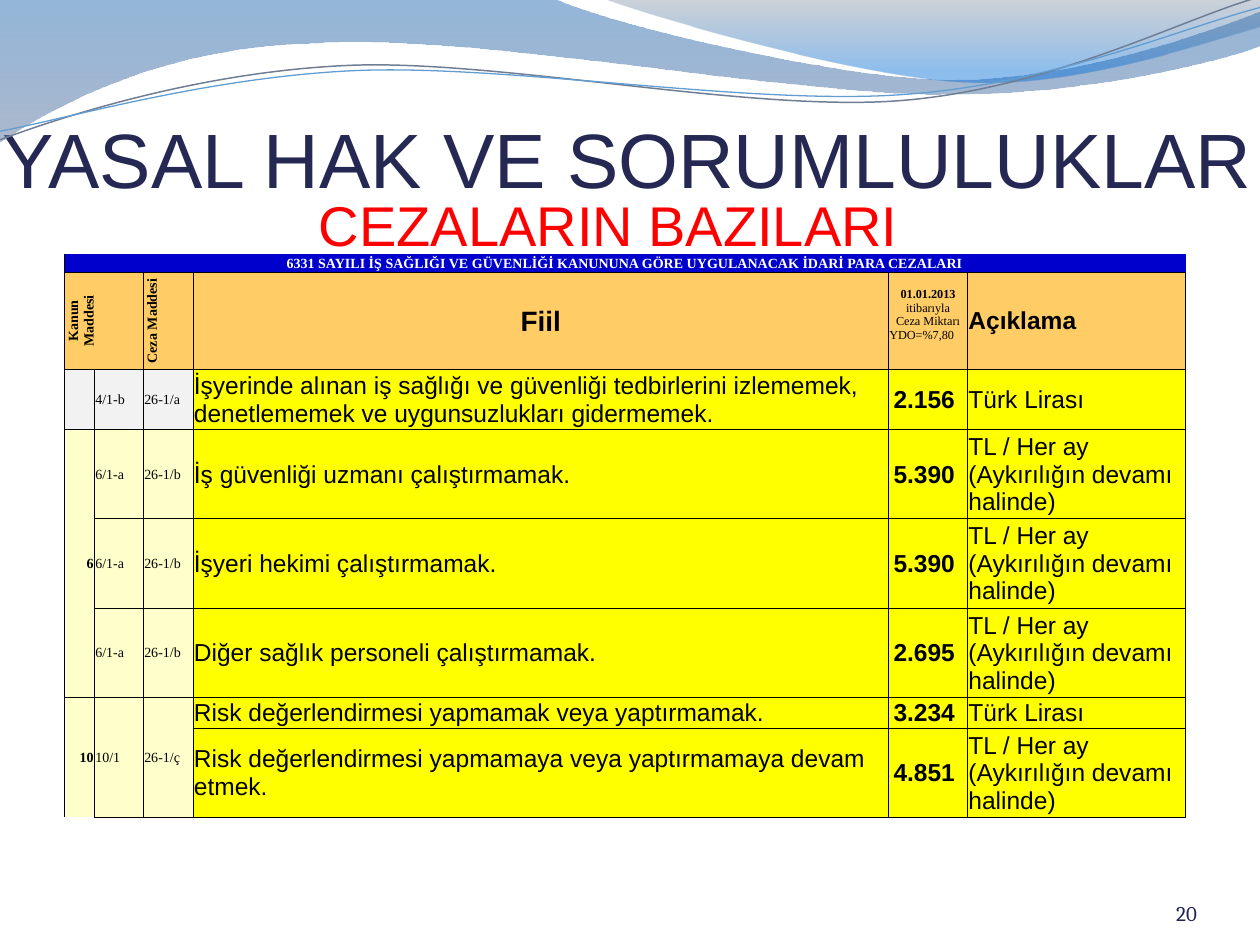
from lxml import etree
from pptx import Presentation
from pptx.dml.color import RGBColor
from pptx.enum.text import MSO_ANCHOR, PP_ALIGN
from pptx.oxml.ns import qn
from pptx.util import Pt

LEFT, CENTER, RIGHT = PP_ALIGN.LEFT, PP_ALIGN.CENTER, PP_ALIGN.RIGHT
TOP, MIDDLE, BOTTOM = MSO_ANCHOR.TOP, MSO_ANCHOR.MIDDLE, MSO_ANCHOR.BOTTOM
SANS, SERIF = "Arial", "Times New Roman"

# Header waves, in points: start, then straight (2 numbers) or cubic (6 numbers) steps
WAVES = [
    dict(start=(0, 0), steps=[
        (316.8, -0.7),
        (342.7, 12.2, 478.1, 45.4, 545.8, 45.4),
        (614.2, 45.4, 689.8, 18.7, 720, 6.5),
        (720.7, 25.9),
        (707.8, 31.7, 626.4, 54.7, 537.1, 54),
        (447.8, 54, 275, 20.2, 185, 24.5),
        (92.9, 25.9, 33.1, 59.8, -0.7, 81.4)],
        stops=[(0, "125EAA", 45), (1, "697FA4", 55)]),
    dict(start=(344.9, -0.7), steps=[
        (366.5, 7.9, 491, 44.6, 553.7, 46.8),
        (616.3, 49.7, 691.9, 23, 720, 15.1),
        (720, 0)],
        stops=[(0, "596982", 30), (0.8, "0670DA", 45)]),
    dict(start=(0, 79.9), steps=[
        (34.6, 67, 113.8, 41, 199.4, 37.4),
        (284.4, 33.8, 427, 64.1, 513.4, 57.6),
        (599.8, 51.1, 675.4, 10.8, 718.6, -1.4)],
        line=("707E95", 0.85)),
    dict(start=(0, 74.9), steps=[
        (33.8, 69.1, 118.1, 43.9, 203.8, 40.3),
        (290.2, 36.7, 429.8, 60.5, 516.2, 54),
        (601.9, 48.2, 677.5, 15.1, 720, 4.3)],
        line=("629DD1", 0.75)),
]

# Table content; None marks a cell covered by a merge
MONTHLY = "TL / Her ay (Aykırılığın devamı halinde)"
BANNER = "6331 SAYILI İŞ SAĞLIĞI VE GÜVENLİĞİ KANUNUNA GÖRE UYGULANACAK İDARİ PARA CEZALARI"
ROWS = [
    [BANNER] + [None] * 5,
    ["Kanun Maddesi", None, "Ceza Maddesi", "Fiil", "01.01.2013 ", "Açıklama"],
    ["", "4/1-b", "26-1/a", "İşyerinde alınan iş sağlığı ve güvenliği tedbirlerini izlememek, "
     "denetlememek ve uygunsuzlukları gidermemek.", "2.156", "Türk Lirası"],
    ["6", "6/1-a", "26-1/b", "İş güvenliği uzmanı çalıştırmamak.", "5.390", MONTHLY],
    [None, "6/1-a", "26-1/b", "İşyeri hekimi çalıştırmamak.", "5.390", MONTHLY],
    [None, "6/1-a", "26-1/b", "Diğer sağlık personeli çalıştırmamak.", "2.695", MONTHLY],
    ["10", "10/1", "26-1/ç", "Risk değerlendirmesi yapmamak veya yaptırmamak.",
     "3.234", "Türk Lirası"],
    [None, None, None, "Risk değerlendirmesi yapmamaya veya yaptırmamaya devam etmek.",
     "4.851", MONTHLY],
]
MERGES = [(0, 0, 0, 5), (1, 0, 1, 1), (3, 0, 5, 0), (6, 0, 7, 0), (6, 1, 7, 1), (6, 2, 7, 2)]
COL_WIDTHS = [17, 28, 28.4, 397.4, 45.2, 124.6]
ROW_HEIGHTS = [10.4, 55.4, 34.2, 51, 51, 51, 17.6, 51]
SIDES = {(0, c): "LB" for c in range(6)} | {(6, 0): "LRT", (7, 0): "LR"}

# Formats for header cells and for body columns
SMALL = dict(size=8, font=SERIF)
LARGE = dict(size=14, font=SANS)
HEADS = [dict(SMALL, bold=True, align=CENTER)] * 3 + [
    dict(size=16, font=SANS, bold=True, align=CENTER),
    dict(size=7, font=SERIF, bold=True, align=CENTER),
    dict(LARGE, bold=True)]
BODY = [dict(SMALL, bold=True, align=RIGHT), SMALL, SMALL, LARGE,
        dict(LARGE, bold=True, align=RIGHT), LARGE]


def rgb(value):
    return RGBColor.from_string(value)


def write(p, text, size, font, color="000000", bold=False, align=LEFT):
    """Add one formatted run to a paragraph."""
    p.alignment = align
    r = p.add_run()
    r.text = text
    r.font.size, r.font.name, r.font.bold = Pt(size), font, bold
    r.font.color.rgb = rgb(color)


def frame(sp, box, anchor, margins):
    """Place a text shape and set up its frame."""
    sp.left, sp.top, sp.width, sp.height = map(Pt, box)
    tf = sp.text_frame
    tf.word_wrap, tf.vertical_anchor = True, anchor
    tf.margin_left, tf.margin_top, tf.margin_right, tf.margin_bottom = map(Pt, margins)
    return tf.paragraphs[0]


def draw_wave(s, start, steps, stops=None, line=None):
    points = [(Pt(x), Pt(y)) for step in steps for x, y in zip(step[::2], step[1::2])]
    builder = s.shapes.build_freeform(Pt(start[0]), Pt(start[1]))
    builder.add_line_segments(points, close=bool(stops))
    sp = builder.convert_to_shape()
    sp.shadow.inherit = False
    # Join each three points of a cubic step into one curve
    nodes = iter(list(sp._element.iter(qn("a:lnTo"))))
    for step in steps:
        group = [next(nodes) for _ in range(len(step) // 2)]
        if len(group) == 3:
            curve = etree.Element(qn("a:cubicBezTo"))
            group[0].addprevious(curve)
            for node in group:
                curve.append(node[0])
                node.getparent().remove(node)
    if line:
        sp.fill.background()
        sp.line.color.rgb, sp.line.width = rgb(line[0]), Pt(line[1])
        return
    sp.line.fill.background()
    sp.fill.gradient()
    sp.fill.gradient_angle = 270
    for stop, (position, color, _) in zip(sp.fill.gradient_stops, stops):
        stop.position, stop.color.rgb = position, rgb(color)
    colors = sp._element.spPr.find(qn("a:gradFill")).iter(qn("a:srgbClr"))
    for node, (_, _, opacity) in zip(colors, stops):
        etree.SubElement(node, qn("a:alpha"), val=str(opacity * 1000))


def set_borders(cell, sides):
    tc_pr = cell._tc.get_or_add_tcPr()
    for i, side in enumerate("LRTB"):
        ln = etree.Element(qn("a:ln" + side), w=str(Pt(0.5)))
        if side in sides:
            fill = etree.SubElement(ln, qn("a:solidFill"))
            etree.SubElement(fill, qn("a:srgbClr"), val="000000")
        else:
            etree.SubElement(ln, qn("a:noFill"))
        tc_pr.insert(i, ln)


def cell_fill(row, col):
    if row < 2:
        return ("0000CC", "FFCC66")[row]
    if col > 2:
        return "FFFF00"
    return "F2F2F2" if row == 2 else "FFFFCC"


def cell_format(row, col):
    if row == 0:
        return dict(HEADS[0], color="FFFFFF")
    return HEADS[col] if row == 1 else BODY[col]


def draw_table(s):
    shape = s.shapes.add_table(len(ROWS), len(COL_WIDTHS), Pt(37), Pt(145.2),
                               Pt(sum(COL_WIDTHS)), Pt(sum(ROW_HEIGHTS)))
    table = shape.table
    table.first_row = table.horz_banding = False
    for column, width in zip(table.columns, COL_WIDTHS):
        column.width = Pt(width)
    for row, height in zip(table.rows, ROW_HEIGHTS):
        row.height = Pt(height)
    for r, texts in enumerate(ROWS):
        for c, text in enumerate(texts):
            cell = table.cell(r, c)
            cell.vertical_anchor = MIDDLE
            cell.margin_left = cell.margin_top = Pt(0.5)
            cell.margin_right = Pt(7.2 if r > 1 and c == 4 else 0.5)
            cell.margin_bottom = 0
            cell.fill.solid()
            cell.fill.fore_color.rgb = rgb(cell_fill(r, c))
            set_borders(cell, SIDES.get((r, c), "LRTB"))
            if text:
                write(cell.text_frame.paragraphs[0], text, **cell_format(r, c))
    for r1, c1, r2, c2 in MERGES:
        table.cell(r1, c1).merge(table.cell(r2, c2))
    # Upright headings and the rest of the amount heading
    for c in (0, 2):
        table.cell(1, c)._tc.get_or_add_tcPr().set("vert", "vert270")
    amount = table.cell(1, 4)
    amount.margin_bottom = Pt(7.5)
    tf = amount.text_frame
    plain = dict(HEADS[4], bold=False)
    write(tf.paragraphs[0], "itibarıyla", **plain)
    tf.paragraphs[0].add_line_break()
    write(tf.paragraphs[0], "Ceza Miktarı", **plain)
    write(tf.add_paragraph(), "YDO=%7,80", **dict(plain, align=LEFT))


prs = Presentation()
prs.slide_width, prs.slide_height = Pt(720), Pt(540)
s = prs.slides.add_slide(prs.slide_layouts[5])

for wave in WAVES:
    draw_wave(s, **wave)

# Title, subtitle, table and page number
p = frame(s.shapes.title, (-13.7, 60.5, 745.2, 56.9), TOP, (7.2, 3.2, 7.2, 0))
write(p, "YASAL HAK VE SORUMLULUKLAR", 44, SANS, "242852", align=CENTER)
p = frame(s.shapes.add_textbox(0, 0, 0, 0), (20.2, 105.8, 655.2, 283.7), TOP, (7.2, 3.2, 7.2, 3.6))
write(p, "CEZALARIN BAZILARI", 32, SANS, "FF0000", align=CENTER)
draw_table(s)
p = frame(s.shapes.add_textbox(0, 0, 0, 0), (624.2, 500.4, 59.8, 28.8), BOTTOM, (0, 0, 0, 0))
write(p, "20", 12, "Cambria", "22264E", align=RIGHT)

prs.save("out.pptx")
